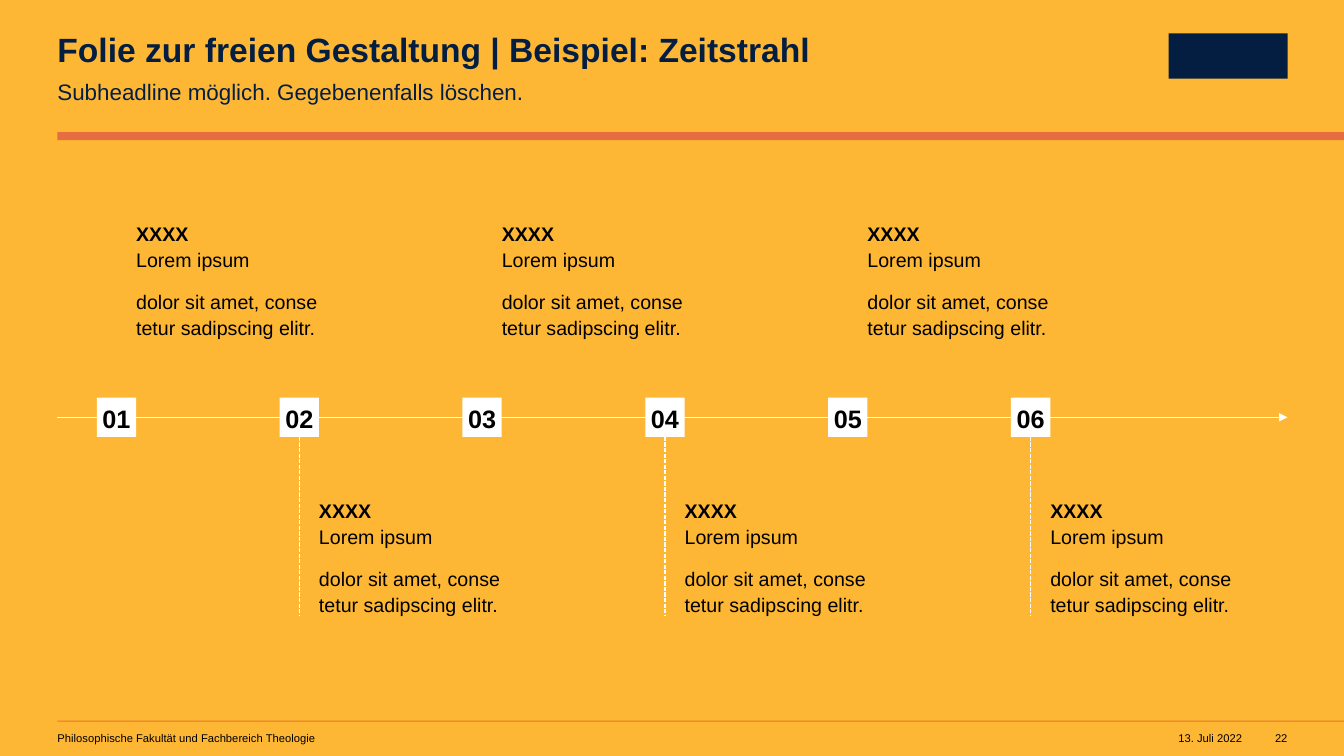
from pptx import Presentation
from pptx.dml.color import RGBColor
from pptx.enum.dml import MSO_LINE
from pptx.enum.shapes import MSO_CONNECTOR as Connector, MSO_SHAPE as Shape
from pptx.enum.text import MSO_ANCHOR as Anchor, PP_ALIGN as Align
from pptx.oxml.ns import qn
from pptx.util import Inches, Pt
from lxml.etree import SubElement

WIDTH, HEIGHT = 13.33, 7.5
LEFT, RIGHT = 0.57, 12.77
NAVY, BLACK, WHITE = "041E42", "000000", "FFFFFF"
YELLOW, ORANGE, CORAL = "FDB735", "E87722", "E46D41"
STEPS = ["01", "02", "03", "04", "05", "06"]
MARKER = 0.39
STEM = 1.77
BODY_WIDTH, BODY_HEIGHT = 1.95, 1.18


def color(value):
    return RGBColor.from_string(value)


def style(paragraph, size, ink=BLACK, bold=False, align=Align.LEFT,
          spacing=1.0, after=0):
    paragraph.font.name = "Arial"
    paragraph.font.size = Pt(size)
    paragraph.font.bold = bold
    paragraph.font.color.rgb = color(ink)
    paragraph.alignment = align
    paragraph.line_spacing = spacing
    paragraph.space_after = Pt(after)


def prepare_frame(shape, anchor=Anchor.TOP, wrap=True):
    """Clear the insets and return the text frame."""
    frame = shape.text_frame
    frame.margin_left = frame.margin_right = 0
    frame.margin_top = frame.margin_bottom = 0
    frame.vertical_anchor = anchor
    frame.word_wrap = wrap
    return frame


def add_text(slide, box, text, size, wrap=True, **options):
    shape = slide.shapes.add_textbox(*map(Inches, box))
    paragraph = prepare_frame(shape, wrap=wrap).paragraphs[0]
    paragraph.text = text
    style(paragraph, size, **options)


def add_block(slide, box, fill):
    """Add a plain filled rectangle."""
    block = slide.shapes.add_shape(Shape.RECTANGLE, *map(Inches, box))
    block.shadow.inherit = False
    block.fill.solid()
    block.fill.fore_color.rgb = color(fill)
    block.line.fill.background()
    return block


def add_line(slide, start, end):
    line = slide.shapes.add_connector(
        Connector.STRAIGHT, *map(Inches, (*start, *end)))
    line.line.color.rgb = color(WHITE)
    line.line.width = Pt(1)
    SubElement(line._element.spPr, qn("a:effectLst"))
    return line


def add_header(slide, left, top, right):
    title = slide.shapes.title
    title.left, title.top = Inches(left), Inches(top)
    title.width, title.height = Inches(7.49), Inches(0.36)
    paragraph = prepare_frame(title).paragraphs[0]
    paragraph.text = "Folie zur freien Gestaltung | Beispiel: Zeitstrahl"
    style(paragraph, 24, NAVY, bold=True, spacing=0.9)
    add_text(slide, (left, top + 0.42, 7.1, 0.27),
             "Subheadline möglich. Gegebenenfalls löschen.", 16,
             ink=NAVY, spacing=1.1, after=12)
    add_block(slide, (right - 1.18, top, 1.18, 0.45), NAVY)
    add_block(slide, (left, top + 0.98, WIDTH - left, 0.08), CORAL)


def add_footer(slide, left, top, right):
    add_block(slide, (left, top, WIDTH - left, 0.01), ORANGE)
    row = top + 0.11
    add_text(slide, (left, row, 5.98, 0.13),
             "Philosophische Fakultät und Fachbereich Theologie", 8)
    add_text(slide, (right - 1.1, row, 0.65, 0.13), "13. Juli 2022", 8,
             wrap=False, align=Align.RIGHT)
    add_text(slide, (right - 0.13, row, 0.13, 0.13), "22", 8,
             wrap=False, align=Align.RIGHT)


def add_marker(slide, left, axis, number):
    marker = add_block(slide, (left, axis - MARKER / 2, MARKER, MARKER), WHITE)
    paragraph = prepare_frame(marker, Anchor.MIDDLE).paragraphs[0]
    paragraph.text = number
    style(paragraph, 18, bold=True, align=Align.CENTER, spacing=1.1, after=12)
    return marker


def add_description(slide, left, top):
    shape = slide.shapes.add_textbox(
        *map(Inches, (left, top, BODY_WIDTH, BODY_HEIGHT)))
    frame = prepare_frame(shape)
    heading, details = frame.paragraphs[0], frame.add_paragraph()
    label = heading.add_run()
    label.text = "XXXX"
    label.font.bold = True
    heading.add_line_break()
    heading.add_run().text = "Lorem ipsum"
    details.text = "dolor sit amet, conse\vtetur sadipscing elitr."
    for paragraph in (heading, details):
        style(paragraph, 14, spacing=1.1, after=12)


def add_timeline(slide, left, axis, right):
    """Place the arrow and its steps, described above and below in turn."""
    arrow = add_line(slide, (left, axis), (right, axis))
    SubElement(arrow.line._get_or_add_ln(), qn("a:tailEnd"), type="triangle")
    first = left + MARKER
    pitch = (right - left - 1.32) / len(STEPS)
    half = MARKER / 2
    for index, number in enumerate(STEPS):
        marker_left = first + index * pitch
        marker = add_marker(slide, marker_left, axis, number)
        top = axis - half - STEM
        if index % 2:
            middle, bottom = marker_left + half, axis + half
            stem = add_line(slide, (middle, bottom), (middle, bottom + STEM))
            stem.line.dash_style = MSO_LINE.SQUARE_DOT
            stem.begin_connect(marker, 2)
            top = bottom + STEM - BODY_HEIGHT
        add_description(slide, marker_left + MARKER, top)


def main():
    presentation = Presentation()
    presentation.slide_width = Inches(WIDTH)
    presentation.slide_height = Inches(HEIGHT)
    slide = presentation.slides.add_slide(presentation.slide_layouts[5])
    slide.background.fill.solid()
    slide.background.fill.fore_color.rgb = color(YELLOW)
    add_header(slide, LEFT, 0.33, RIGHT)
    add_timeline(slide, LEFT, 4.14, RIGHT)
    add_footer(slide, LEFT, 7.15, RIGHT)
    presentation.save("out.pptx")


if __name__ == "__main__":
    main()
